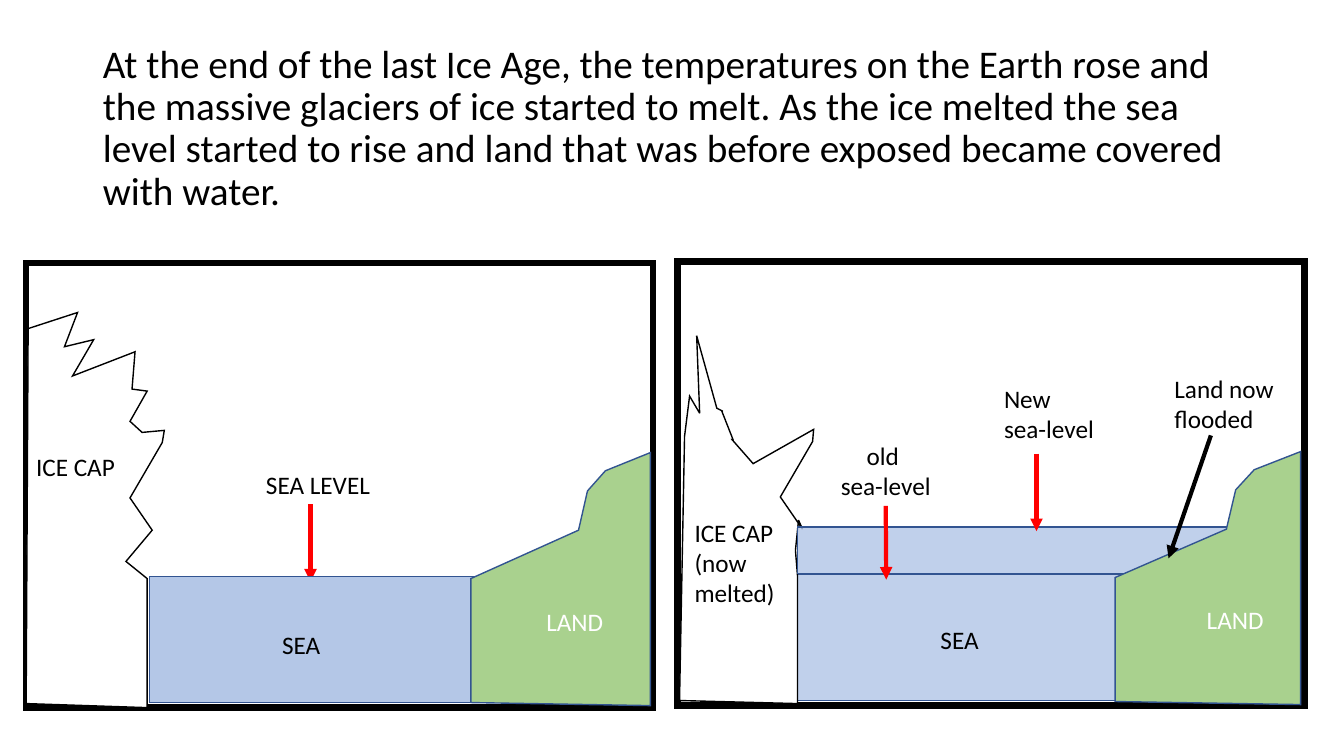
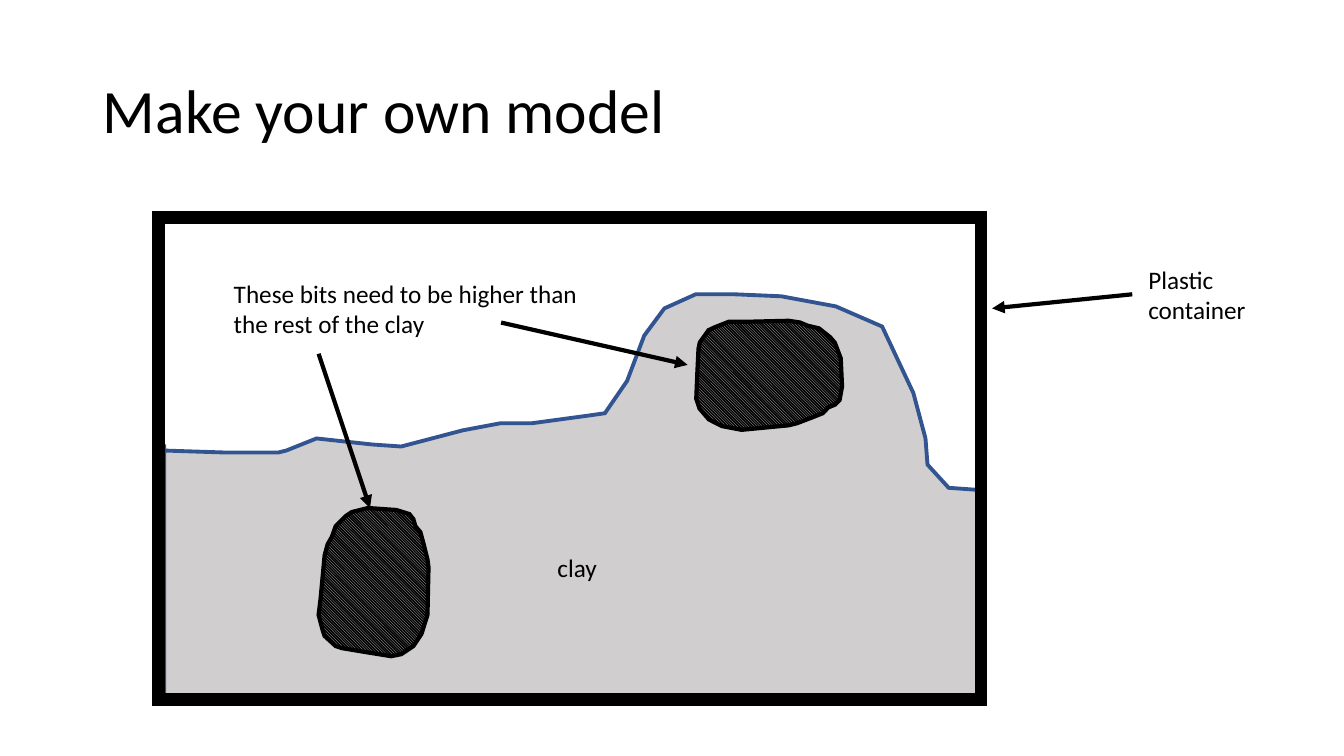
from dataclasses import dataclass

from lxml import etree
from pptx import Presentation
from pptx.dml.color import RGBColor
from pptx.enum.dml import MSO_PATTERN
from pptx.enum.shapes import MSO_CONNECTOR, MSO_SHAPE
from pptx.enum.text import MSO_ANCHOR, MSO_AUTO_SIZE, PP_ALIGN
from pptx.oxml.ns import qn
from pptx.util import Inches, Pt

RECT = MSO_SHAPE.RECTANGLE
STRAIGHT = MSO_CONNECTOR.STRAIGHT
HATCH = MSO_PATTERN.DARK_DOWNWARD_DIAGONAL
LEFT, CENTER = PP_ALIGN.LEFT, PP_ALIGN.CENTER
TOP, MIDDLE = MSO_ANCHOR.TOP, MSO_ANCHOR.MIDDLE
BOTTOM_SITE = 2


@dataclass(frozen=True)
class Theme:
    font: str = "Calibri"
    title_size: float = 44
    body_size: float = 28
    label_size: float = 18
    black: str = "000000"
    white: str = "FFFFFF"
    red: str = "FF0000"
    sea: str = "B4C7E7"
    land: str = "A9D18E"
    clay: str = "D0CECE"
    edge: str = "325491"
    thin: float = 1
    arrow: float = 3


T = Theme()

# Outlines in inches, measured from the corner of the box they belong to.
ICE_BEFORE = [
    (1.2, 3.13), (1.2, 4.41), (0, 4.37), (0.02, 0.65), (0.51, 0.49),
    (0.38, 0.83), (0.67, 0.76), (0.46, 1.12), (1.08, 0.88), (1.05, 1.25),
    (1.2, 1.27), (1.03, 1.57), (1.15, 1.68), (1.37, 1.66), (1.35, 1.78),
    (1.03, 2.33), (1.25, 2.65), (0.99, 2.96),
]
ICE_AFTER = [
    (1.19, 3.12), (1.19, 4.39), (0.02, 4.36), (0.07, 1.74), (0.12, 1.34),
    (0.22, 1.51), (0.19, 0.74), (0.39, 1.46), (0.45, 1.49), (0.44, 1.49),
    (0.55, 1.77), (0.54, 1.77), (0.75, 2.01), (1.35, 1.67), (1.34, 1.79),
    (1.02, 2.34), (1.24, 2.66), (1.2, 2.57), (1.17, 2.87),
]
# Here x is a share of the width of the land.
LAND = [
    (0, 2.48), (0, 1.25), (0.6, 0.77), (0.65, 0.38), (0.75, 0.18),
    (1, 0), (1, 2.51),
]
CLAY = [
    (0.06, 2.25), (0.06, 4.74), (8.12, 4.76), (8.12, 2.7), (7.84, 2.68),
    (7.63, 2.45), (7.61, 2.19), (7.49, 1.74), (7.18, 1.08), (6.72, 0.88),
    (6.18, 0.78), (5.72, 0.76), (5.33, 0.76), (5.02, 0.9), (4.82, 1.17),
    (4.65, 1.62), (4.43, 1.94), (4.29, 1.96), (3.7, 2.04), (3.39, 2.04),
    (3.02, 2.11), (2.41, 2.27), (2.12, 2.25), (1.57, 2.19), (1.27, 2.31),
    (1.19, 2.33), (0.67, 2.33), (0.06, 2.31),
]
LUMP = [
    (0.17, 0.18), (0.27, 0.08), (0.33, 0.04), (0.49, 0), (0.77, 0.02),
    (0.9, 0.06), (0.94, 0.11), (0.96, 0.18), (1.01, 0.24), (1.04, 0.35),
    (1.08, 0.51), (1.09, 0.59), (1.08, 1.06), (1.02, 1.25), (0.94, 1.37),
    (0.82, 1.45), (0.72, 1.47), (0.47, 1.43), (0.23, 1.39), (0.17, 1.37),
    (0.06, 1.27), (0.04, 1.21), (0, 1.06), (0.02, 0.9), (0.06, 0.47),
    (0.09, 0.36), (0.13, 0.29),
]


def rgb(color):
    return RGBColor.from_string(color)


def set_line(line, color, width):
    """Solid line with square corners."""
    line.color.rgb = rgb(color)
    line.width = Pt(width)
    ln = line.color and line.fill and line._get_or_add_ln()
    etree.SubElement(ln, qn("a:miter"), lim="800000")
    return ln


def style(shape, fill, color, width, opacity=None):
    shape.shadow.inherit = False
    if fill:
        shape.fill.solid()
        shape.fill.fore_color.rgb = rgb(fill)
    else:
        shape.fill.background()
    if opacity:
        solid = shape.element.spPr.find(qn("a:solidFill"))
        etree.SubElement(solid[0], qn("a:alpha"), val=str(opacity * 1000))
    set_line(shape.line, color, width)
    return shape


def rect(s, x, y, w, h, fill, color, width, opacity=None):
    sp = s.shapes.add_shape(RECT, Inches(x), Inches(y), Inches(w), Inches(h))
    return style(sp, fill, color, width, opacity)


def outline(s, x, y, points, fill, color, width, close=True):
    pts = [(Inches(x + dx), Inches(y + dy)) for dx, dy in points]
    builder = s.shapes.build_freeform(*pts[0], scale=1.0)
    builder.add_line_segments(pts[1:], close=close)
    return style(builder.convert_to_shape(), fill, color, width)


def arrow(s, x1, y1, x2, y2, color=T.black):
    c = s.shapes.add_connector(
        STRAIGHT, Inches(x1), Inches(y1), Inches(x2), Inches(y2))
    ln = set_line(c.line, color, T.arrow)
    etree.SubElement(ln, qn("a:tailEnd"), type="triangle")
    etree.SubElement(c.element.spPr, qn("a:effectLst"))
    return c


def write(p, text, size, color=T.black):
    r = p.add_run()
    r.text = text
    r.font.name = T.font
    r.font.size = Pt(size)
    r.font.color.rgb = rgb(color)


def label(s, x, y, w, *lines, color=T.black, align=LEFT, rows=None):
    h = 0.1 + 0.3 * (rows or len(lines))
    sp = s.shapes.add_textbox(Inches(x), Inches(y), Inches(w), Inches(h))
    tf = sp.text_frame
    tf.word_wrap = True
    tf.auto_size = MSO_AUTO_SIZE.SHAPE_TO_FIT_TEXT
    for i, line in enumerate(lines):
        p = tf.add_paragraph() if i else tf.paragraphs[0]
        p.alignment = align
        write(p, line, T.label_size, color)
    return sp


def fill_placeholder(sp, x, y, w, h, text, size, anchor):
    sp.left, sp.top = Inches(x), Inches(y)
    sp.width, sp.height = Inches(w), Inches(h)
    tf = sp.text_frame
    tf.auto_size = MSO_AUTO_SIZE.NONE
    tf.vertical_anchor = anchor
    p = tf.paragraphs[0]
    p.alignment = LEFT
    p.line_spacing = 0.9
    write(p, text, size)
    return p


def ice(s, x, y, points):
    outline(s, x, y, points, T.white, T.black, T.thin)


def water(s, x, y, w, h, opacity=None):
    rect(s, x, y, w, h, T.sea, T.edge, T.thin, opacity)


def land(s, x, y, w):
    points = [(share * w, dy) for share, dy in LAND]
    outline(s, x, y, points, T.land, T.edge, T.thin)


def panel_before(s, x, y):
    """Ice cap still whole, sea at its old level."""
    rect(s, x, y, 6.22, 4.41, None, T.black, 4.5)
    arrow(s, x + 2.82, y + 2.39, x + 2.82, y + 3.16, T.red)
    label(s, x + 2.28, y + 2, 1.3, "SEA LEVEL")
    water(s, x + 1.22, y + 3.11, 3.22, 1.25)
    ice(s, x, y, ICE_BEFORE)
    label(s, x, y + 1.82, 1.3, "ICE CAP")
    label(s, x + 2.44, y + 3.58, 1.3, "SEA")
    land(s, x + 4.41, y + 1.88, 1.78)
    label(s, x + 5.06, y + 3.36, 1.1, "LAND", color=T.white)


def panel_after(s, x, y):
    """Ice cap melted, sea raised over part of the land."""
    rect(s, x, y, 6.22, 4.41, None, T.black, 5)
    old = label(s, x + 1.4, y + 1.73, 1.33, "old ", "sea-level", align=CENTER)
    water(s, x + 1.19, y + 3.11, 3.22, 1.25, opacity=83)
    ice(s, x, y, ICE_AFTER)
    label(s, x + 0.07, y + 2.49, 1.3, "ICE CAP", "(now melted)", rows=3)
    label(s, x + 2.51, y + 3.55, 1.3, "SEA")
    water(s, x + 1.19, y + 2.64, 4.35, 0.46, opacity=83)
    old_level = arrow(s, x + 2.07, y + 2.4, x + 2.07, y + 3.16, T.red)
    old_level.begin_connect(old, BOTTOM_SITE)
    label(s, x + 3.14, y + 1.16, 1.33, "New", "sea-level")
    arrow(s, x + 3.56, y + 1.91, x + 3.56, y + 2.68, T.red)
    land(s, x + 4.34, y + 1.89, 1.84)
    label(s, x + 5.15, y + 3.36, 1.1, "LAND", color=T.white)
    arrow(s, x + 5.29, y + 1.73, x + 4.87, y + 2.95)
    label(s, x + 4.83, y + 1.06, 1.5, "Land now flooded", rows=2)


def lump(s, x, y, rotation=0):
    sp = outline(s, x, y, LUMP, T.clay, T.black, 3)
    sp.fill.patterned()
    sp.fill.pattern = HATCH
    sp.fill.fore_color.rgb = rgb(T.clay)
    sp.fill.back_color.rgb = rgb(T.black)
    sp.rotation = rotation


def clay_model(s, x, y):
    outline(s, x, y, CLAY, T.clay, T.edge, 2.75, close=False)
    rect(s, x, y, 8.16, 4.78, None, T.black, 9)
    lump(s, x + 1.59, y + 2.88)
    lump(s, x + 5.5, y + 0.8, rotation=83.3)
    arrow(s, x + 1.59, y + 1.35, x + 2.1, y + 2.88)
    label(s, x + 0.65, y + 0.55, 3.84,
          "These bits need to be higher than the rest of the clay", rows=2)
    arrow(s, x + 3.4, y + 1.04, x + 5.25, y + 1.46)
    label(s, x + 3.86, y + 3.27, 2.18, "clay")
    label(s, x + 9.72, y + 0.41, 1.19, "Plastic", "container")
    arrow(s, x + 9.66, y + 0.76, x + 8.27, y + 0.9)


def sea_level_slide(prs):
    s = prs.slides.add_slide(prs.slide_layouts[1])
    title = s.shapes.title.element
    title.getparent().remove(title)
    p = fill_placeholder(
        s.placeholders[1], 0.92, 0.39, 11.5, 2,
        "At the end of the last Ice Age, the temperatures on the Earth rose "
        "and the massive glaciers of ice started to melt. As the ice melted "
        "the sea level started to rise and land that was before exposed "
        "became covered with water.", T.body_size, TOP)
    p.space_before = Pt(10)
    pPr = p._p.get_or_add_pPr()
    pPr.set("marL", "0")
    pPr.set("indent", "0")
    etree.SubElement(pPr, qn("a:buNone"))
    panel_before(s, 0.26, 2.61)
    panel_after(s, 6.72, 2.59)


def model_slide(prs):
    s = prs.slides.add_slide(prs.slide_layouts[5])
    fill_placeholder(s.shapes.title, 0.92, 0.4, 11.5, 1.45,
                     "Make your own model", T.title_size, MIDDLE)
    clay_model(s, 1.57, 2.16)


def main():
    prs = Presentation()
    prs.slide_width, prs.slide_height = Inches(13.33), Inches(7.5)
    sea_level_slide(prs)
    model_slide(prs)
    prs.save("out.pptx")


if __name__ == "__main__":
    main()
